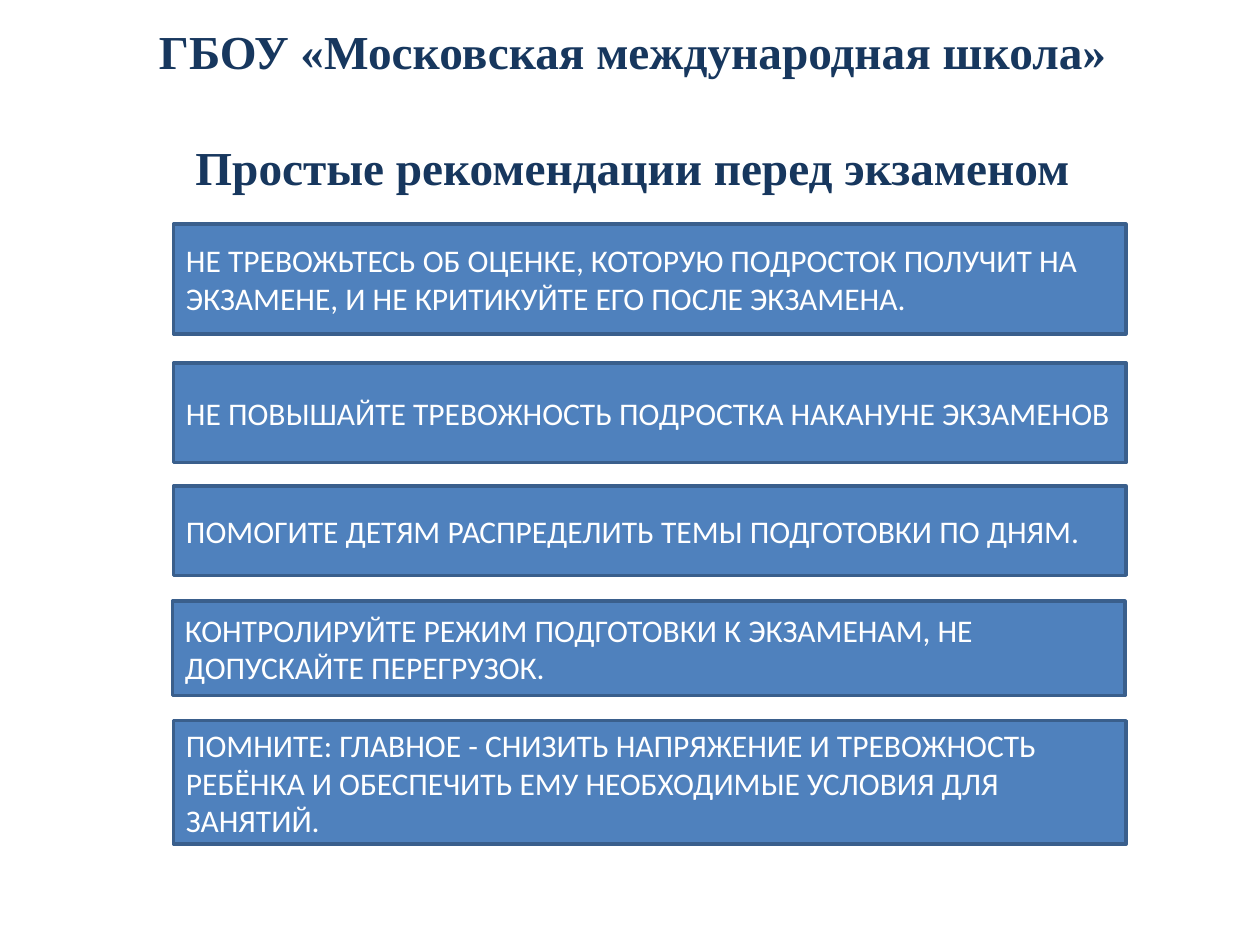
from typing import NamedTuple

from pptx import Presentation
from pptx.dml.color import RGBColor
from pptx.enum.shapes import MSO_SHAPE as Shape
from pptx.enum.text import MSO_ANCHOR as Anchor, MSO_AUTO_SIZE as Fit, PP_ALIGN as Align
from pptx.util import Cm, Pt

NAVY = RGBColor(0x17, 0x37, 0x5E)
BLUE = RGBColor(0x4F, 0x81, 0xBD)
EDGE = RGBColor(0x3A, 0x5F, 0x8C)
WHITE = RGBColor(0xFF, 0xFF, 0xFF)

WIDTH = 19.2


class Card(NamedTuple):
    left: float
    top: float
    height: float
    text: str


HEADS = [
    "ГБОУ «Московская международная школа»",
    "Простые рекомендации перед экзаменом",
]

CARDS = [
    Card(3.5, 4.52, 2.21, "НЕ ТРЕВОЖЬТЕСЬ ОБ ОЦЕНКЕ, КОТОРУЮ ПОДРОСТОК ПОЛУЧИТ "
         "НА ЭКЗАМЕНЕ, И НЕ КРИТИКУЙТЕ ЕГО ПОСЛЕ ЭКЗАМЕНА."),
    Card(3.5, 7.32, 2.01, "НЕ ПОВЫШАЙТЕ ТРЕВОЖНОСТЬ ПОДРОСТКА НАКАНУНЕ ЭКЗАМЕНОВ"),
    Card(3.5, 9.8, 1.8, "ПОМОГИТЕ ДЕТЯМ РАСПРЕДЕЛИТЬ ТЕМЫ ПОДГОТОВКИ ПО ДНЯМ."),
    Card(3.48, 12.12, 1.9, "КОНТРОЛИРУЙТЕ РЕЖИМ ПОДГОТОВКИ К ЭКЗАМЕНАМ, "
         "НЕ ДОПУСКАЙТЕ ПЕРЕГРУЗОК."),
    Card(3.5, 14.53, 2.49, "ПОМНИТЕ: ГЛАВНОЕ - СНИЗИТЬ НАПРЯЖЕНИЕ И ТРЕВОЖНОСТЬ "
         "РЕБЁНКА И ОБЕСПЕЧИТЬ ЕМУ НЕОБХОДИМЫЕ УСЛОВИЯ ДЛЯ ЗАНЯТИЙ."),
]


def style(para, name: str, size: int, color: RGBColor, bold: bool, align: Align) -> None:
    para.alignment = align
    for run in para.runs:
        font = run.font
        font.name, font.size, font.bold = name, Pt(size), bold
        font.color.rgb = color


def draw_title(slide) -> None:
    title = slide.shapes.title
    title.left, title.top = Cm(1.32), Cm(0.15)
    title.width, title.height = Cm(22.86), Cm(4.75)
    frame = title.text_frame
    frame.text = "\n".join(HEADS)
    frame.auto_size = Fit.NONE
    frame.vertical_anchor = Anchor.MIDDLE
    frame.margin_bottom = Cm(0.8)
    for para in frame.paragraphs:
        para.space_before = Pt(0)
        style(para, "Times New Roman", 27, NAVY, True, Align.CENTER)
    frame.paragraphs[1].space_before = Pt(33.5)


def draw_card(slide, card: Card) -> None:
    box = slide.shapes.add_shape(
        Shape.RECTANGLE, Cm(card.left), Cm(card.top), Cm(WIDTH), Cm(card.height))
    box.shadow.inherit = False
    box.fill.solid()
    box.fill.fore_color.rgb = BLUE
    box.line.color.rgb = EDGE
    box.line.width = Pt(2)
    frame = box.text_frame
    frame.text = card.text
    frame.word_wrap = True
    frame.vertical_anchor = Anchor.MIDDLE
    style(frame.paragraphs[0], "Calibri", 18, WHITE, False, Align.LEFT)


def main() -> None:
    deck = Presentation()
    deck.slide_width, deck.slide_height = Cm(25.4), Cm(19.05)
    slide = deck.slides.add_slide(deck.slide_layouts[5])
    draw_title(slide)
    for card in CARDS:
        draw_card(slide, card)
    deck.save("out.pptx")


if __name__ == "__main__":
    main()
